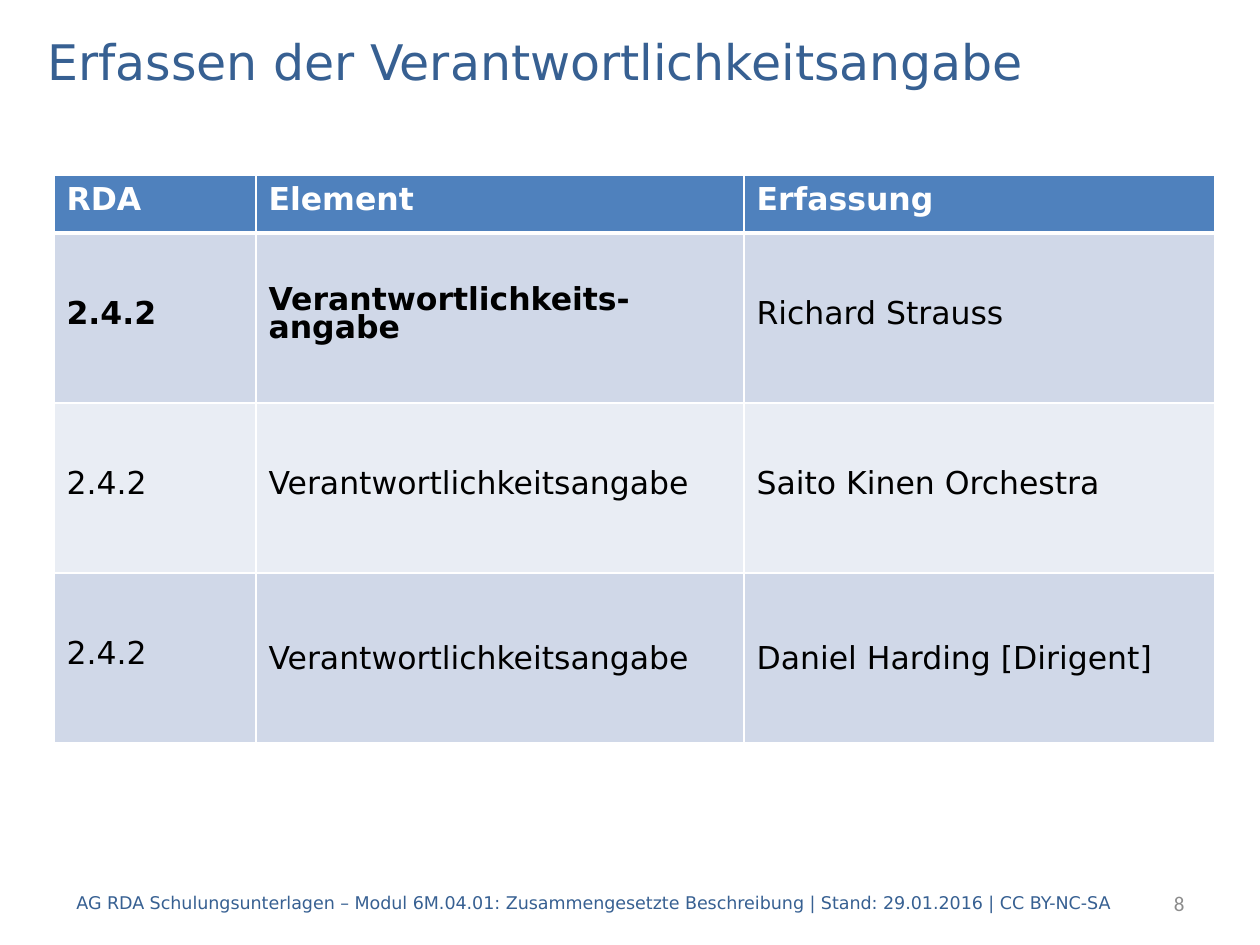
from lxml import etree
from pptx import Presentation
from pptx.dml.color import RGBColor
from pptx.enum.text import MSO_ANCHOR, PP_ALIGN
from pptx.oxml.ns import qn
from pptx.util import Pt

MID, TOP = MSO_ANCHOR.MIDDLE, MSO_ANCHOR.TOP
LEFT, RIGHT = PP_ALIGN.LEFT, PP_ALIGN.RIGHT
HEX = {"white": "FFFFFF", "black": "000000", "gray": "8C8C8C", "navy": "376092",
       "head": "4F81BD", "dark": "D0D8E8", "light": "E9EDF4"}
SANS = "DejaVu Sans"


def px(n):
    return round(n * 914400 / 126)


def style(para, size, hue, face=SANS, bold=False):
    font = para.font
    font.size, font.name, font.bold = Pt(size), face, bold
    font.color.rgb = RGBColor.from_string(HEX[hue])


deck = Presentation()
deck.slide_width, deck.slide_height = px(1260), px(945)
slide = deck.slides.add_slide(deck.slide_layouts[6])

texts = [
    ("Erfassen der Verantwortlichkeitsangabe", (35, 25, 1191, 71), 28, "navy", SANS, LEFT),
    ("AG RDA Schulungsunterlagen – Modul 6M.04.01: Zusammengesetzte Beschreibung"
     " | Stand: 29.01.2016 | CC BY-NC-SA", (64, 878, 1101, 50), 10, "navy", SANS, LEFT),
    ("8", (997, 878, 200, 50), 12, "gray", "Calibri", RIGHT),
]
for words, area, size, hue, face, align in texts:
    frame = slide.shapes.add_textbox(*map(px, area)).text_frame
    frame.word_wrap = True
    frame.vertical_anchor = MID
    frame.text = words
    para = frame.paragraphs[0]
    para.alignment = align
    style(para, size, hue, face)

rows = [
    ("RDA", "Element", "Erfassung"),
    ("2.4.2", "Verantwortlichkeits-angabe", "Richard Strauss"),
    ("2.4.2", "Verantwortlichkeitsangabe", "Saito Kinen Orchestra"),
    ("2.4.2", "Verantwortlichkeitsangabe", "Daniel Harding [Dirigent]"),
]
fills = ["head", "dark", "light", "dark"]
bolds = {(0, 0), (0, 1), (0, 2), (1, 0), (1, 1)}
table = slide.shapes.add_table(4, 3, px(54), px(175), px(1161), px(568)).table
for col, wide in zip(table.columns, (202, 488, 471)):
    col.width = px(wide)
for row, high in zip(table.rows, (58, 170, 170, 170)):
    row.height = px(high)

for r, row in enumerate(rows):
    for c, words in enumerate(row):
        cell = table.cell(r, c)
        cell.text = words
        cell.vertical_anchor = MID if r else TOP
        para = cell.text_frame.paragraphs[0]
        style(para, 18, "black" if r else "white", bold=(r, c) in bolds)
        if r:
            para.line_spacing = Pt(16)
            para.space_before = para.space_after = Pt(6)
        if r == 3 and c:
            cell.margin_top = px(16)
        props = cell._tc.get_or_add_tcPr()
        for side in "LRTB":
            thick = (r, side) in ((0, "B"), (1, "T"))
            line = etree.SubElement(props, qn("a:ln" + side), w=str(Pt(3 if thick else 1)))
            paint = etree.SubElement(line, qn("a:solidFill"))
            etree.SubElement(paint, qn("a:srgbClr"), val=HEX["white"])
        cell.fill.solid()
        cell.fill.fore_color.rgb = RGBColor.from_string(HEX[fills[r]])

deck.save("out.pptx")
